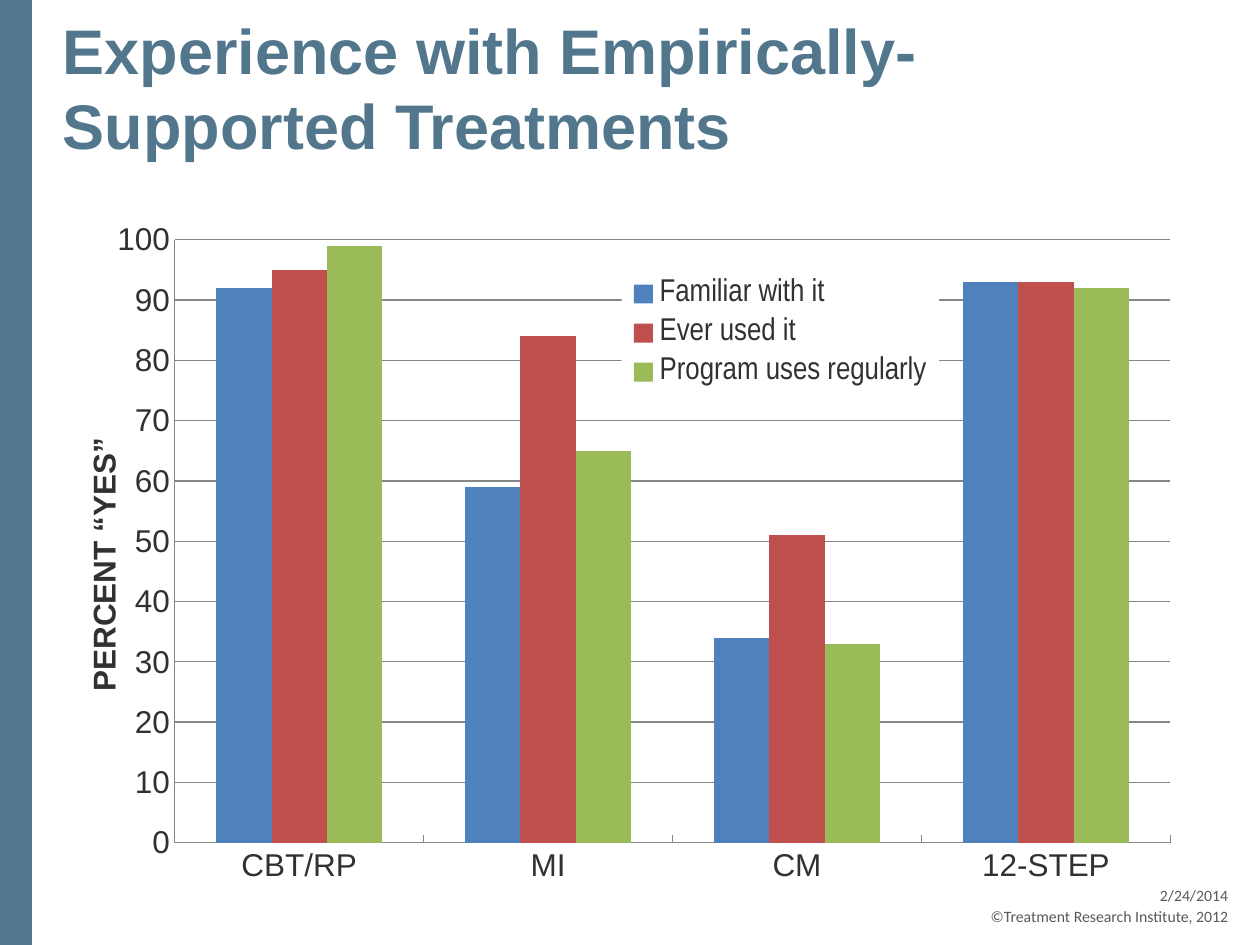
"""Build a slide with a clustered column chart on treatment experience."""
from dataclasses import dataclass

from lxml.etree import fromstring
from pptx import Presentation
from pptx.chart.chart import Chart
from pptx.chart.data import CategoryChartData
from pptx.dml.color import RGBColor
from pptx.enum.chart import XL_CHART_TYPE as ChartType
from pptx.enum.chart import XL_LEGEND_POSITION as LegendPosition
from pptx.enum.chart import XL_TICK_MARK as TickMark
from pptx.enum.shapes import MSO_SHAPE as Preset
from pptx.enum.text import MSO_ANCHOR as Anchor
from pptx.enum.text import PP_ALIGN as Align
from pptx.oxml.ns import qn
from pptx.slide import Slide
from pptx.util import Emu, Pt

PX_PER_INCH = 126
CHART_NS = "http://schemas.openxmlformats.org/drawingml/2006/chart"
DRAWING_NS = "http://schemas.openxmlformats.org/drawingml/2006/main"


@dataclass(frozen=True)
class Theme:
    accent: str = "52778C"
    chart_text: str = "313131"
    footer_text: str = "595959"
    grid: str = "868686"
    background: str = "FFFFFF"
    heading_font: str = "Arial"
    legend_font: str = "Arial Narrow"
    footer_font: str = "Calibri"
    title_size: int = 36
    chart_size: int = 18
    footer_size: int = 9
    line_width: float = 0.75


@dataclass(frozen=True)
class Box:
    left: int
    top: int
    width: int
    height: int

    def emu(self) -> tuple[Emu, ...]:
        return tuple(map(px, (self.left, self.top, self.width, self.height)))


@dataclass(frozen=True)
class Series:
    name: str
    values: tuple[int, ...]
    color: str


THEME = Theme()
CATEGORIES = ("CBT/RP", "MI", "CM", "12-STEP")
SERIES = (
    Series("Familiar with it", (92, 59, 34, 93), "4F81BD"),
    Series("Ever used it", (95, 84, 51, 93), "C0504D"),
    Series("Program uses regularly", (99, 65, 33, 92), "9BBB59"),
)
FOOTERS = (("2/24/2014", 886), ("©Treatment Research Institute, 2012", 907))


def px(length: int) -> Emu:
    return Emu(round(length * 914400 / PX_PER_INCH))


def format_font(font, *, name: str, size: int, color: str, bold: bool = False) -> None:
    font.name, font.size, font.bold = name, Pt(size), bold
    font.color.rgb = RGBColor.from_string(color)


def add_text(slide: Slide, text: str, box: Box, *, font: str, size: int, color: str,
             bold: bool = False, align: Align = Align.LEFT, anchor: Anchor = Anchor.TOP,
             margins: tuple[int, int, int, int] = (0, 0, 0, 0)) -> None:
    frame = slide.shapes.add_textbox(*box.emu()).text_frame
    frame.word_wrap, frame.vertical_anchor = True, anchor
    (frame.margin_left, frame.margin_top,
     frame.margin_right, frame.margin_bottom) = map(px, margins)
    paragraph = frame.paragraphs[0]
    paragraph.alignment = align
    run = paragraph.add_run()
    run.text = text
    format_font(run.font, name=font, size=size, color=color, bold=bold)


def add_band(slide: Slide, box: Box, color: str) -> None:
    shape = slide.shapes.add_shape(Preset.RECTANGLE, *box.emu())
    shape.shadow.inherit = False
    shape.fill.solid()
    shape.fill.fore_color.rgb = RGBColor.from_string(color)
    shape.line.fill.background()


def set_layout(element, position: int, inner: bool = False, **fractions: float) -> None:
    for previous in element.findall(qn("c:layout")):
        element.remove(previous)
    target = '<c:layoutTarget val="inner"/>' if inner else ""
    modes = "".join(f'<c:{axis}Mode val="edge"/>' for axis in "xy")
    values = "".join(f'<c:{key} val="{value}"/>' for key, value in fractions.items())
    element.insert(position, fromstring(
        f'<c:layout xmlns:c="{CHART_NS}"><c:manualLayout>'
        f"{target}{modes}{values}</c:manualLayout></c:layout>"))


def style_line(line, color: str) -> None:
    line.color.rgb = RGBColor.from_string(color)
    line.width = Pt(THEME.line_width)


def style_axes(chart: Chart) -> None:
    category_axis, value_axis = chart.category_axis, chart.value_axis
    category_axis.major_tick_mark = TickMark.INSIDE
    value_axis.major_tick_mark = TickMark.NONE
    value_axis.minimum_scale, value_axis.maximum_scale = 0, 100
    value_axis.major_unit = 10
    value_axis.has_major_gridlines = True
    for line in (category_axis.format.line, value_axis.format.line,
                 value_axis.major_gridlines.format.line):
        style_line(line, THEME.grid)
    title = value_axis.axis_title
    run = title.text_frame.paragraphs[0].add_run()
    run.text = "PERCENT “YES”"
    format_font(run.font, name=THEME.heading_font, size=THEME.chart_size,
                color=THEME.chart_text, bold=True)
    set_layout(title._element, 1, x=0.01, y=0.3)


def style_legend(chart: Chart) -> None:
    chart.has_legend = True
    legend = chart.legend
    legend.position = LegendPosition.RIGHT
    legend.include_in_layout = False
    format_font(legend.font, name=THEME.legend_font, size=THEME.chart_size,
                color=THEME.chart_text)
    set_layout(legend._element, 1, x=0.49, y=0.07, w=0.28, h=0.18)
    legend._element.find(qn("c:txPr")).addprevious(fromstring(
        f'<c:spPr xmlns:c="{CHART_NS}" xmlns:a="{DRAWING_NS}"><a:solidFill>'
        f'<a:srgbClr val="{THEME.background}"/></a:solidFill></c:spPr>'))


def add_column_chart(slide: Slide, box: Box) -> None:
    data = CategoryChartData()
    data.categories = CATEGORIES
    for series in SERIES:
        data.add_series(series.name, series.values)
    chart = slide.shapes.add_chart(ChartType.COLUMN_CLUSTERED, *box.emu(), data).chart
    chart.has_title = False
    format_font(chart.font, name=THEME.heading_font, size=THEME.chart_size,
                color=THEME.chart_text)
    plot = chart.plots[0]
    plot.gap_width, plot.overlap, plot.vary_by_categories = 150, 0, False
    for drawn, series in zip(plot.series, SERIES):
        drawn.format.fill.solid()
        drawn.format.fill.fore_color.rgb = RGBColor.from_string(series.color)
    style_axes(chart)
    style_legend(chart)
    plot_area = chart._chartSpace.find(f".//{qn('c:plotArea')}")
    set_layout(plot_area, 0, inner=True, x=0.096, y=0.028, w=0.878, h=0.853)


def main() -> None:
    presentation = Presentation()
    presentation.slide_width, presentation.slide_height = px(1260), px(945)
    slide = presentation.slides.add_slide(presentation.slide_layouts[6])
    for text, top in FOOTERS:
        add_text(slide, text, Box(829, top, 399, 28), font=THEME.footer_font,
                 size=THEME.footer_size, color=THEME.footer_text, align=Align.RIGHT)
    add_band(slide, Box(0, 0, 32, 945), THEME.accent)
    add_text(slide, "Experience with Empirically-Supported Treatments",
             Box(63, 38, 1134, 98), font=THEME.heading_font, size=THEME.title_size,
             color=THEME.accent, bold=True, anchor=Anchor.MIDDLE, margins=(0, 6, 13, 6))
    add_column_chart(slide, Box(66, 220, 1134, 707))
    presentation.save("out.pptx")


if __name__ == "__main__":
    main()
